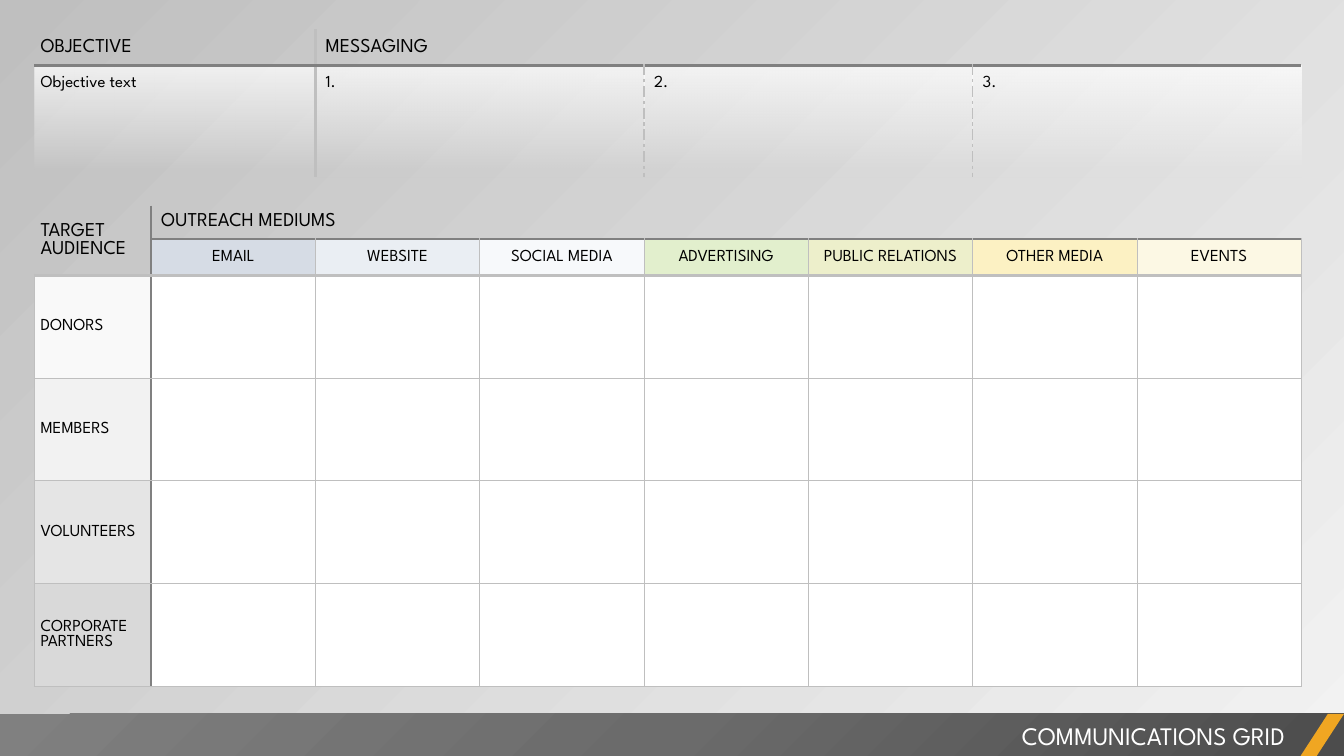
from lxml import etree
from pptx import Presentation
from pptx.dml.color import RGBColor
from pptx.enum.shapes import MSO_SHAPE as Shape
from pptx.enum.text import MSO_ANCHOR as Anchor, MSO_AUTO_SIZE as AutoSize, PP_ALIGN as Align
from pptx.oxml import parse_xml
from pptx.oxml.ns import nsdecls, qn
from pptx.util import Pt

TITLE = "COMMUNICATIONS GRID"
BRIEF_HEADS = ["OBJECTIVE", "MESSAGING"]
BRIEF_TEXTS = ["Objective text", "1.", "2.", "3."]
AUDIENCE_HEAD, MEDIUM_HEAD = "TARGET AUDIENCE", "OUTREACH MEDIUMS"
MEDIUMS = [
    ("EMAIL", "D6DCE5"), ("WEBSITE", "EAEEF3"), ("SOCIAL MEDIA", "F7F9FB"),
    ("ADVERTISING", "E2EFCD"), ("PUBLIC RELATIONS", "EDEFCB"),
    ("OTHER MEDIA", "FCF1C3"), ("EVENTS", "FCF8E4"),
]
AUDIENCES = [
    ("DONORS", "F9F9F9"), ("MEMBERS", "F2F2F2"),
    ("VOLUNTEERS", "E5E5E5"), ("CORPORATE PARTNERS", "D9D9D9"),
]
COLORS = {
    "text": "000000", "white": "FFFFFF", "light": "BFBFBF", "dark": "808080",
    "accent": "F0A622", "page": "F2F2F2", "bar": "4C4C4C", "bar_mid": "6B6B6B",
}
FONT = "League Spartan"
NO_STYLE = "{2D5ABB26-0587-4C30-8999-92F81FD0307C}"

# Lengths in points
SLIDE_W, SLIDE_H = 960, 540
LEFT, TABLE_W = 24.5, 905
AUDIENCE_W = 83.5
MEDIUM_W = (TABLE_W - AUDIENCE_W) / len(MEDIUMS)
BRIEF_TOP, BRIEF_ROWS = 20.9, [25.9, 79.9]
GRID_TOP, GRID_ROWS = 146.9, [23.8, 24.5] + [73.4] * len(AUDIENCES)
BAR_TOP = 510
HEAD_INSET, FIRST_INSET = 7.2, 4.5

THIN = (COLORS["light"], 0.5)
THICK = (COLORS["light"], 2.25)
DASHED = (COLORS["light"], 1, "sysDashDot")
DARK_THIN = (COLORS["dark"], 1)
DARK = (COLORS["dark"], 1.5)
DARK_THICK = (COLORS["dark"], 2.25)

LINEAR = '<a:lin ang="{}" scaled="0"/>'
CORNER = '<a:path path="circle"><a:fillToRect l="100000" t="100000"/></a:path>'
FADE = [(0, COLORS["white"], 75), (93, COLORS["white"], 0)]


def set_gradient(fill, holder, stops, direction):
    """Fill with (position, colour, opacity) stops, all in percent."""
    fill.solid()
    solid = next(holder.iter(qn("a:solidFill")))
    marks = "".join(
        f'<a:gs pos="{pos * 1000}"><a:srgbClr val="{color}">'
        f'<a:alpha val="{opacity * 1000}"/></a:srgbClr></a:gs>'
        for pos, color, opacity in stops)
    solid.getparent().replace(solid, parse_xml(
        f'<a:gradFill {nsdecls("a")} rotWithShape="1"><a:gsLst>{marks}</a:gsLst>'
        f'{direction}</a:gradFill>'))


def set_borders(cell, left=None, right=None, top=None, bottom=None):
    props = cell._tc.get_or_add_tcPr()
    for index, (side, line) in enumerate(zip("LRTB", (left, right, top, bottom))):
        border = etree.Element(qn(f"a:ln{side}"))
        if line:
            color, width, *dash = line
            border.set("w", str(Pt(width)))
            paint = etree.SubElement(border, qn("a:solidFill"))
            etree.SubElement(paint, qn("a:srgbClr"), val=color)
            etree.SubElement(border, qn("a:prstDash"), val=dash[0] if dash else "solid")
        else:
            etree.SubElement(border, qn("a:noFill"))
        props.insert(index, border)


def format_runs(frame, size, color, align):
    for paragraph in frame.paragraphs:
        paragraph.alignment = align
        for run in paragraph.runs:
            run.font.size = Pt(size)
            run.font.name = FONT
            run.font.color.rgb = RGBColor.from_string(color)


def write(cell, text, size, inset=0, top=0, align=Align.LEFT, anchor=Anchor.MIDDLE):
    cell.text = text
    cell.margin_left, cell.margin_top = Pt(inset), Pt(top)
    cell.margin_right = cell.margin_bottom = 0
    cell.vertical_anchor = anchor
    format_runs(cell.text_frame, size, COLORS["text"], align)


def paint(shape, color):
    shape.fill.solid()
    shape.fill.fore_color.rgb = RGBColor.from_string(color)


def add_plain_table(slide, top, widths, heights):
    frame = slide.shapes.add_table(len(heights), len(widths), Pt(LEFT), Pt(top),
                                   Pt(sum(widths)), Pt(sum(heights)))
    table = frame.table
    table.first_row = table.horz_banding = False
    next(frame.element.iter(qn("a:tableStyleId"))).text = NO_STYLE
    for column, width in zip(table.columns, widths):
        column.width = Pt(width)
    for row, height in zip(table.rows, heights):
        row.height = Pt(height)
    return table


def add_grid(slide):
    widths = [AUDIENCE_W] + [MEDIUM_W] * len(MEDIUMS)
    grid = add_plain_table(slide, GRID_TOP, widths, GRID_ROWS)
    last = len(MEDIUMS)
    grid.cell(0, 0).merge(grid.cell(1, 0))
    grid.cell(0, 1).merge(grid.cell(0, last))
    write(grid.cell(0, 0), AUDIENCE_HEAD, 14, FIRST_INSET)
    write(grid.cell(0, 1), MEDIUM_HEAD, 14, HEAD_INSET)
    for col, (medium, color) in enumerate(MEDIUMS, 1):
        write(grid.cell(1, col), medium, 12, align=Align.CENTER)
        paint(grid.cell(1, col), color)
    for row, (audience, color) in enumerate(AUDIENCES, 2):
        write(grid.cell(row, 0), audience, 12, FIRST_INSET)
        paint(grid.cell(row, 0), color)
        for col in range(1, last + 1):
            paint(grid.cell(row, col), COLORS["white"])

    def upright(row, edge):
        if edge == 1:
            return DARK
        return THIN if row >= 2 or (row == 1 and edge) else None

    def level(edge, col):
        if edge == 1:
            return DARK_THIN if col else None
        return {0: None, 2: THICK}.get(edge, THIN)

    for row in range(len(GRID_ROWS)):
        for col in range(last + 1):
            set_borders(grid.cell(row, col), upright(row, col), upright(row, col + 1),
                        level(row, col), level(row + 1, col))


def add_brief(slide):
    widths = [AUDIENCE_W + MEDIUM_W] + [2 * MEDIUM_W] * 3
    brief = add_plain_table(slide, BRIEF_TOP, widths, BRIEF_ROWS)
    brief.cell(0, 1).merge(brief.cell(0, 3))
    insets = [FIRST_INSET] + [HEAD_INSET] * 3
    for col, (head, inset) in enumerate(zip(BRIEF_HEADS, insets)):
        write(brief.cell(0, col), head, 14, inset)
    head_edges = [None, THICK, None, None, None]
    text_edges = [None, THICK, DASHED, DASHED, None]
    for col, (text, inset) in enumerate(zip(BRIEF_TEXTS, insets)):
        cell = brief.cell(1, col)
        write(cell, text, 12, inset, top=7.2, anchor=Anchor.TOP)
        set_gradient(cell.fill, cell._tc.get_or_add_tcPr(), FADE, LINEAR.format(90 * 60000))
        set_borders(brief.cell(0, col), *head_edges[col:col + 2], bottom=DARK_THICK)
        set_borders(cell, *text_edges[col:col + 2], top=DARK_THICK)


def add_footer(slide):
    height = SLIDE_H - BAR_TOP
    bar = slide.shapes.add_shape(Shape.RECTANGLE, 0, Pt(BAR_TOP), Pt(SLIDE_W), Pt(height))
    set_gradient(bar.fill, bar.element.spPr,
                 [(0, COLORS["bar"], 100), (50, COLORS["bar_mid"], 100),
                  (100, COLORS["dark"], 100)], CORNER)
    slash = slide.shapes.add_shape(Shape.PARALLELOGRAM, Pt(929), Pt(BAR_TOP), Pt(31), Pt(height))
    slash.adjustments[0] = 0.65
    paint(slash, COLORS["accent"])
    for shape in (bar, slash):
        shape.line.fill.background()
        shape.shadow.inherit = False

    title = slide.shapes.title
    title.left, title.top, title.width, title.height = Pt(378), Pt(511), Pt(547), Pt(29)
    frame = title.text_frame
    frame.text = TITLE
    frame.word_wrap = True
    frame.auto_size = AutoSize.NONE
    frame.vertical_anchor = Anchor.MIDDLE
    format_runs(frame, 18, COLORS["white"], Align.RIGHT)
    bar.element.getparent().append(title.element)  # bring the title above the bar


def main():
    deck = Presentation()
    deck.slide_width, deck.slide_height = Pt(SLIDE_W), Pt(SLIDE_H)
    slide = deck.slides.add_slide(deck.slide_layouts[5])
    set_gradient(slide.background.fill, slide.element,
                 [(0, COLORS["page"], 40), (100, COLORS["light"], 100)],
                 LINEAR.format(225 * 60000))
    add_grid(slide)
    add_footer(slide)
    add_brief(slide)
    deck.save("out.pptx")


if __name__ == "__main__":
    main()
